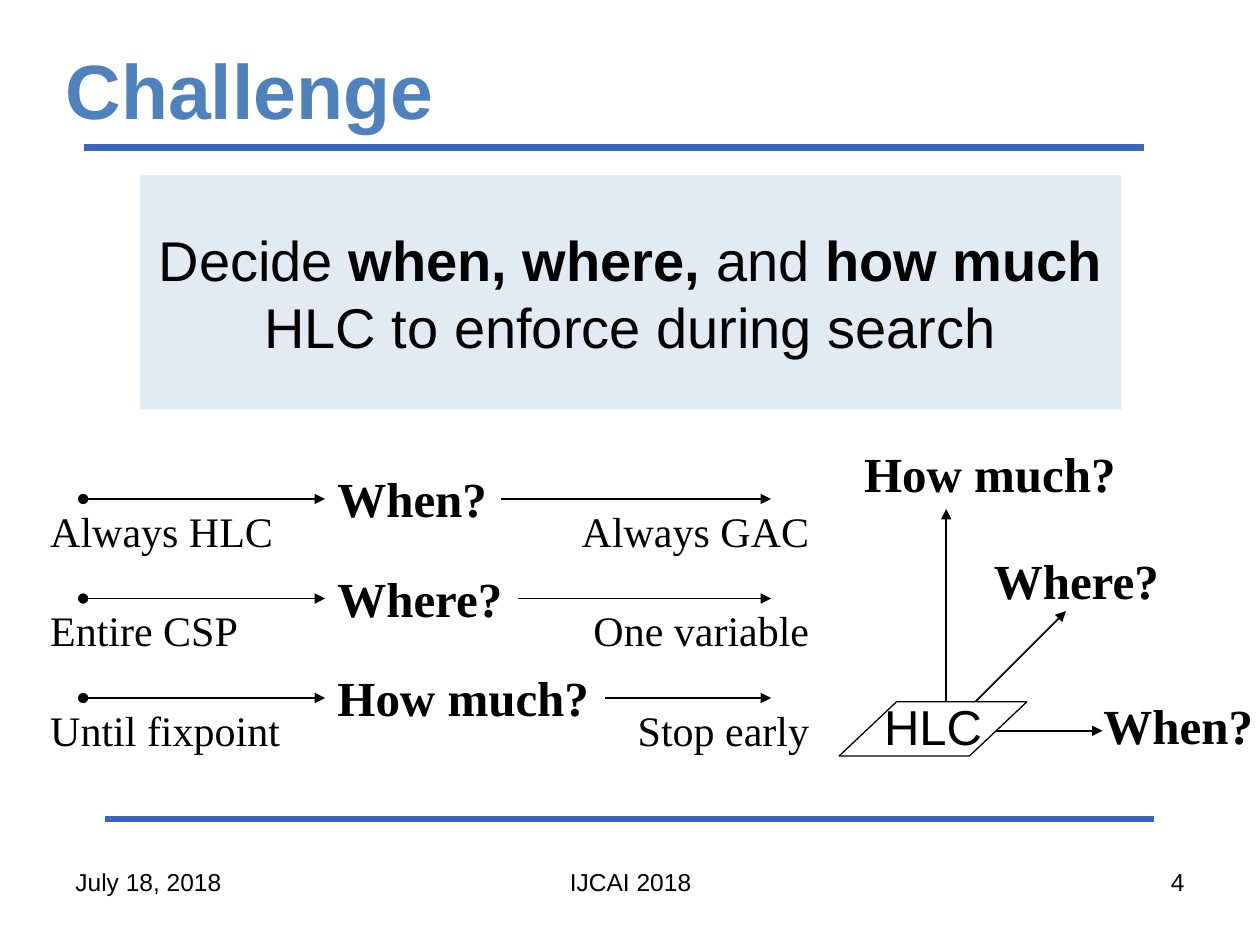
from dataclasses import dataclass

from lxml import etree
from pptx import Presentation
from pptx import util as u
from pptx.dml.color import RGBColor
from pptx.enum import shapes, text
from pptx.oxml import ns


@dataclass(frozen=True)
class Theme:
    """Colours, fonts and type sizes of the slide."""
    ink: str = "000000"
    paper: str = "FFFFFF"
    blue: str = "4F81BD"
    rule: str = "3A65BC"
    sans: str = "Arial"
    serif: str = "Times New Roman"
    title: int = 44
    claim: int = 32
    label: int = 28
    note: int = 24
    foot: int = 14


T = Theme()
LEFT, MID, RIGHT = text.PP_ALIGN.LEFT, text.PP_ALIGN.CENTER, text.PP_ALIGN.RIGHT


def rgb(code):
    """Turn a hex code into a colour."""
    return RGBColor.from_string(code)


def place(shape, box):
    """Set left, top, width and height in inches."""
    shape.left, shape.top, shape.width, shape.height = map(u.Inches, box)


def write(frame, runs, size, font=T.sans, color=T.ink, align=LEFT):
    """Add (words, bold) runs to the first paragraph."""
    para = frame.paragraphs[0]
    para.alignment = align
    for words, bold in runs:
        run = para.add_run()
        run.text = words
        run.font.size = u.Pt(size)
        run.font.name = font
        run.font.bold = bold
        run.font.color.rgb = rgb(color)


def add_text(slide, box, words, size, font=T.serif, bold=False, align=LEFT, wrap=True):
    """Add a text box with one run."""
    frame = slide.shapes.add_textbox(*map(u.Inches, box)).text_frame
    frame.word_wrap = wrap
    write(frame, [(words, bold)], size, font, align=align)


def add_label(slide, left, top, width, words):
    """Add a bold question label."""
    add_text(slide, (left, top, width, 0.57), words, T.label, bold=True, wrap=False)


def add_line(slide, start, end, color=T.ink, width=1, head=None, tail=None):
    """Add a straight line with optional ends."""
    line = slide.shapes.add_connector(
        shapes.MSO_CONNECTOR.STRAIGHT, *map(u.Inches, (*start, *end)))
    line.line.color.rgb = rgb(color)
    line.line.width = u.Pt(width)
    for tag, kind in (("a:headEnd", head), ("a:tailEnd", tail)):
        if kind:
            etree.SubElement(line.line._get_or_add_ln(), ns.qn(tag), type=kind)
    etree.SubElement(line._element.spPr, ns.qn("a:effectLst"))


def add_block(slide, kind, box, fill, runs, size):
    """Add a filled shape with centred text."""
    shape = slide.shapes.add_shape(kind, *map(u.Inches, box))
    shape.shadow.inherit = False
    shape.fill.solid()
    shape.fill.fore_color.rgb = rgb(fill)
    shape.line.fill.background()
    shape.text_frame.word_wrap = True
    shape.text_frame.vertical_anchor = text.MSO_ANCHOR.MIDDLE
    write(shape.text_frame, runs, size, align=MID)
    return shape


def add_title(slide, words):
    """Fill the title placeholder."""
    title = slide.shapes.title
    place(title, (0.42, 0.33, 9, 0.75))
    title.text_frame.auto_size = text.MSO_AUTO_SIZE.NONE
    title.text_frame.vertical_anchor = text.MSO_ANCHOR.MIDDLE
    write(title.text_frame, [(words, True)], T.title, color=T.blue)


def add_claim(slide):
    """Add the tinted box with the main claim."""
    runs = [("Decide ", False), ("when, where, ", True), ("and", False),
            (" how much ", True), ("HLC to enforce during search", False)]
    box = add_block(slide, shapes.MSO_SHAPE.RECTANGLE, (1.11, 1.39, 7.79, 1.86),
                    T.blue, runs, T.claim)
    tint = box._element.spPr.find(".//" + ns.qn("a:srgbClr"))
    etree.SubElement(tint, ns.qn("a:alpha"), val="16000")


def add_axes(slide):
    """Add the three axes that leave the HLC plate."""
    root = (7.51, 5.8)
    for tip in ((8.75, 5.8), (7.51, 4.04), (8.46, 4.85)):
        add_line(slide, root, tip, tail="triangle")
    add_label(slide, 7.79, 4.32, 1.53, "Where?")
    add_label(slide, 8.66, 5.47, 1.4, "When?")
    add_label(slide, 6.76, 3.47, 2.22, "How much?")
    plate = add_block(slide, shapes.MSO_SHAPE.PARALLELOGRAM, (6.66, 5.57, 1.49, 0.43),
                      T.paper, [("HLC", False)], T.label)
    plate.adjustments[0] = 1.06
    plate.line.color.rgb = rgb(T.ink)
    plate.line.width = u.Pt(0.75)
    frame = plate.text_frame
    frame.margin_left = frame.margin_top = frame.margin_right = 0
    frame.margin_bottom = u.Inches(0.05)


def add_scale(slide, y, name, width, low, high):
    """Add one row: low end, question, high end."""
    left = 2.58
    add_line(slide, (0.66, y), (left, y), head="oval", tail="triangle")
    add_line(slide, (left + width, y), (6.12, y), tail="triangle")
    add_label(slide, left, y - 0.29, width, name)
    add_text(slide, (0.3, y, 2.21, 0.5), low, T.note)
    add_text(slide, (4.43, y, 2.09, 0.5), high, T.note, align=RIGHT)


def add_foot(slide):
    """Add date, venue and slide number."""
    for left, width, words, align in ((0.5, 2.33, "July 18, 2018", LEFT),
                                      (3.42, 3.17, "IJCAI 2018", MID),
                                      (7.17, 2.33, "4", RIGHT)):
        add_text(slide, (left, 6.83, width, 0.52), words, T.foot, T.sans, align=align)


def main():
    """Build and save the slide."""
    deck = Presentation()
    deck.slide_width, deck.slide_height = u.Inches(10), u.Inches(7.5)
    slide = deck.slides.add_slide(deck.slide_layouts[5])
    add_line(slide, (0.83, 6.5), (9.16, 6.5), T.rule, 4)
    add_line(slide, (0.67, 1.17), (9.08, 1.17), T.rule, 4)
    add_title(slide, "Challenge")
    add_foot(slide)
    add_claim(slide)
    add_axes(slide)
    rows = (("When?", 1.4, "Always HLC", "Always GAC"),
            ("Where?", 1.53, "Entire CSP", "One variable"),
            ("How much?", 2.22, "Until fixpoint", "Stop early"))
    for i, row in enumerate(rows):
        add_scale(slide, 3.96 + 0.79 * i, *row)
    deck.save("out.pptx")


if __name__ == "__main__":
    main()
